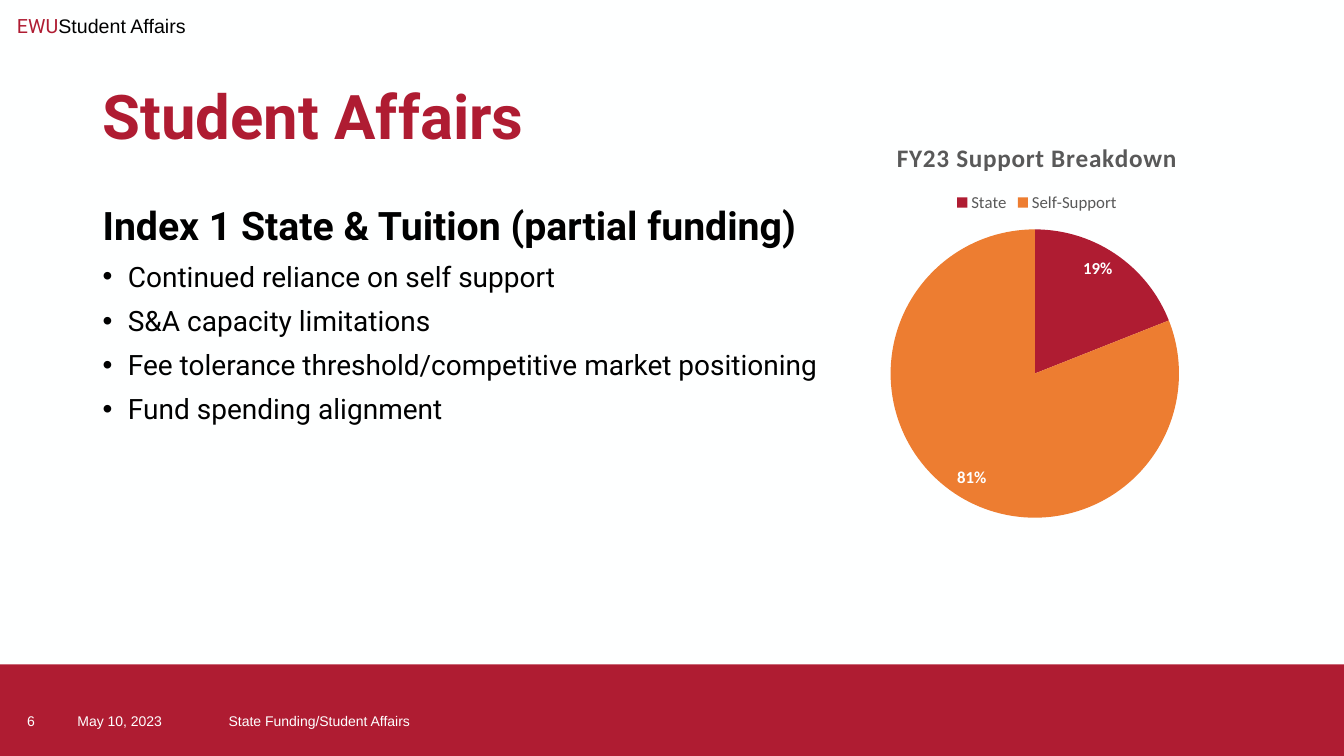
from lxml import etree
from pptx import Presentation
from pptx import util as u
from pptx.chart import data as cd
from pptx.dml.color import RGBColor
from pptx.enum import chart as ch, shapes, text
from pptx.oxml import parse_xml
from pptx.oxml.ns import nsdecls, qn

# Content
W, H = 13.33, 7.5
COLORS = {"red": "AF1C32", "orange": "ED7D31", "white": "FEFFFF",
          "black": "000000", "gray": "595959"}
TITLE = "Student Affairs"
HEADER = [("EWU", "Roboto", "red"), ("Student Affairs", "Arial", "black")]
HEADING = "Index 1 State & Tuition (partial funding)"
BULLETS = ["Continued reliance on self support",
           "S&A capacity limitations",
           "Fee tolerance threshold/competitive market positioning",
           "Fund spending alignment"]
FOOTER = [("6", 0.5), ("May 10, 2023", 1.5), ("State Funding/Student Affairs", 4.5)]
CHART_TITLE = "FY23 Support Breakdown"
SUPPORT = [("State", 19, "red"), ("Self-Support", 81, "orange")]

# Positions
MARGIN = 0.92
BAND_TOP = 6.59
FOOTER_LEFT, FOOTER_TOP, FOOTER_H = 0.17, 6.95, 0.4
CHART_BOX = (8.15, 1.21, 4.27, 4.06)
PIE_SHARE = {"x": 0.16, "y": 0.26, "w": 0.67, "h": 0.71}


def rgb(name):
    return RGBColor.from_string(COLORS[name])


def inches(*lengths):
    return [u.Inches(v) for v in lengths]


def style(font, color, **values):
    for key, value in values.items():
        setattr(font, key, value)
    font.color.rgb = rgb(color)


def add_run(p, words, color, **values):
    r = p.add_run()
    r.text = words
    style(r.font, color, **values)
    return r


def add_box(s, box, anchor=text.MSO_ANCHOR.TOP, wrap=True):
    tf = s.shapes.add_textbox(*inches(*box)).text_frame
    tf.word_wrap = wrap
    tf.vertical_anchor = anchor
    return tf


def add_bullet(p):
    pPr = p._p.get_or_add_pPr()
    pPr.set("marL", str(u.Inches(0.25)))
    pPr.set("indent", str(-u.Inches(0.25)))
    etree.SubElement(pPr, qn("a:buFont")).set("typeface", "Arial")
    etree.SubElement(pPr, qn("a:buChar")).set("char", "•")


prs = Presentation()
prs.slide_width, prs.slide_height = inches(W, H)
s = prs.slides.add_slide(prs.slide_layouts[5])
s.background.fill.solid()
s.background.fill.fore_color.rgb = rgb("white")

# Footer band
band = s.shapes.add_shape(shapes.MSO_SHAPE.RECTANGLE,
                          *inches(0, BAND_TOP, W, H - BAND_TOP))
band.shadow.inherit = False
band.fill.solid()
band.fill.fore_color.rgb = rgb("red")
band.line.fill.background()

# Header
p = add_box(s, (0.07, 0.09, 1.95, 0.34), wrap=False).paragraphs[0]
for words, face, color in HEADER:
    add_run(p, words, color, size=u.Pt(14), name=face)

# Title
sp = s.shapes.title
sp.left, sp.top, sp.width, sp.height = inches(MARGIN, 0.52, 11.5, 1.33)
tf = sp.text_frame
tf.auto_size = text.MSO_AUTO_SIZE.NONE
tf.vertical_anchor = text.MSO_ANCHOR.MIDDLE
p = tf.paragraphs[0]
p.alignment = text.PP_ALIGN.LEFT
p.line_spacing = 0.9
add_run(p, TITLE, "red", size=u.Pt(44), name="Roboto", bold=True)

# Heading and bullets
tf = add_box(s, (MARGIN, 2, 11.5, 4.44))
p = tf.paragraphs[0]
p.line_spacing = 0.9
add_run(p, HEADING, "black", size=u.Pt(28), name="Roboto", bold=True)
for words in BULLETS:
    p = tf.add_paragraph()
    p.line_spacing = 0.9
    p.space_before = u.Pt(10)
    add_bullet(p)
    add_run(p, words, "black", size=u.Pt(20), name="Roboto")

# Footer texts, side by side
left = FOOTER_LEFT
for words, width in FOOTER:
    tf = add_box(s, (left, FOOTER_TOP, width, FOOTER_H), text.MSO_ANCHOR.MIDDLE)
    add_run(tf.paragraphs[0], words, "white", size=u.Pt(10), name="Arial")
    left += width

# Pie chart
data = cd.CategoryChartData()
data.categories = [name for name, _, _ in SUPPORT]
data.add_series("Series 1", [value for _, value, _ in SUPPORT])
chart = s.shapes.add_chart(ch.XL_CHART_TYPE.PIE, *inches(*CHART_BOX), data).chart
style(chart.font, "black", size=u.Pt(10), name="Calibri")
chart.has_title = True
r = add_run(chart.chart_title.text_frame.paragraphs[0], CHART_TITLE, "gray",
            size=u.Pt(18), name="Calibri", bold=True)
r.font._element.set("spc", "50")
chart.chart_title.include_in_layout = False

chart.has_legend = True
chart.legend.position = ch.XL_LEGEND_POSITION.TOP
chart.legend.include_in_layout = False
style(chart.legend.font, "gray", size=u.Pt(12), name="Calibri")

plot = chart.plots[0]
plot.vary_by_categories = True
for i, (_, _, color) in enumerate(SUPPORT):
    fill = plot.series[0].points[i].format.fill
    fill.solid()
    fill.fore_color.rgb = rgb(color)
labels = plot.series[0].data_labels
labels.show_percentage = True
labels.show_value = False
labels.number_format = "0%"
labels.number_format_is_linked = False
labels.position = ch.XL_LABEL_POSITION.INSIDE_END
style(labels.font, "white", size=u.Pt(12), name="Calibri", bold=True)

# Pie placement inside the chart
area = plot._element.getparent()
for old in area.findall(qn("c:layout")):
    area.remove(old)
modes = '<c:layoutTarget val="inner"/><c:xMode val="edge"/><c:yMode val="edge"/>'
shares = "".join(f'<c:{key} val="{value}"/>' for key, value in PIE_SHARE.items())
area.insert(0, parse_xml(f'<c:layout {nsdecls("c")}><c:manualLayout>{modes}{shares}'
                         '</c:manualLayout></c:layout>'))

prs.save("out.pptx")
